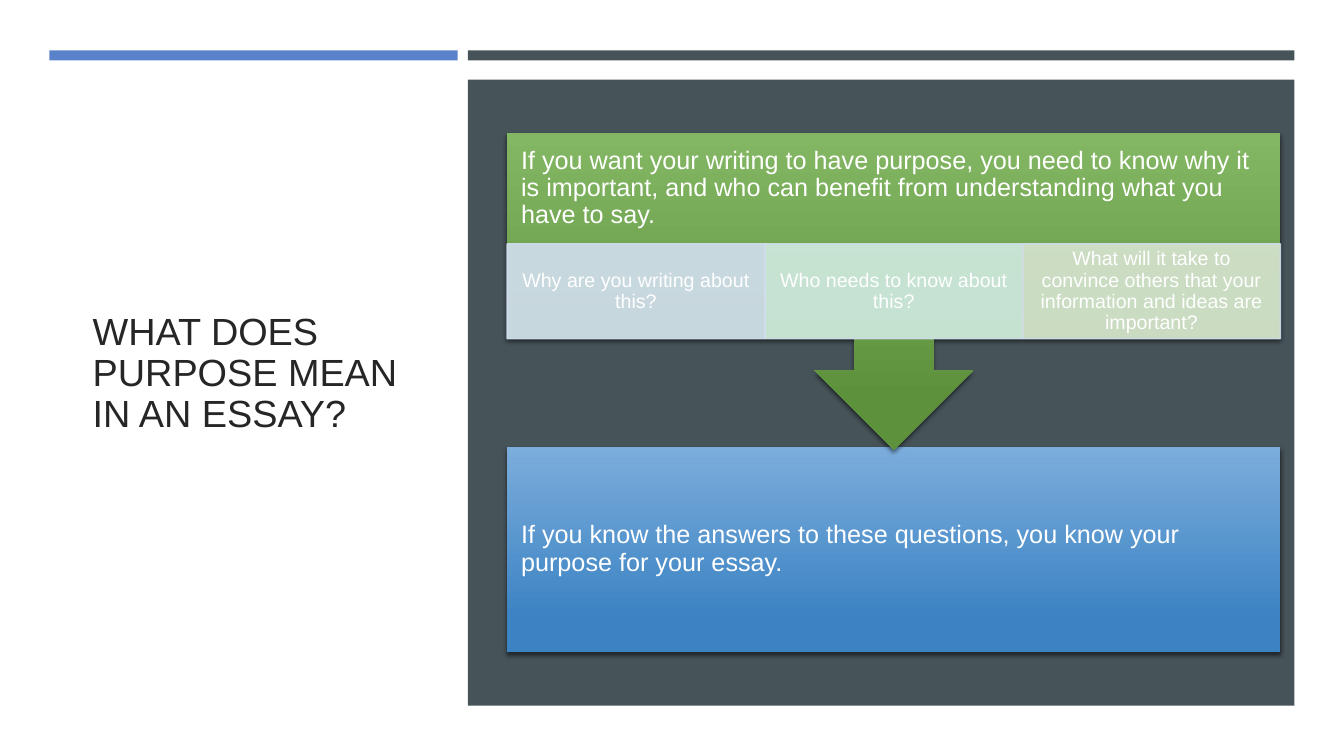
from lxml.etree import SubElement
from pptx import Presentation
from pptx.dml.color import RGBColor
from pptx.enum.shapes import MSO_SHAPE
from pptx.enum.text import MSO_ANCHOR, MSO_AUTO_SIZE, PP_ALIGN
from pptx.oxml.ns import qn
from pptx.util import Inches, Pt

WHITE = RGBColor(0xFF, 0xFF, 0xFF)
INK = RGBColor(0x26, 0x26, 0x26)
ACCENT = RGBColor(0x5A, 0x82, 0xCB)
SLATE = RGBColor(0x46, 0x53, 0x59)
BLUES = (RGBColor(0x7B, 0xAD, 0xDC), RGBColor(0x3C, 0x83, 0xC3))
GREENS = (RGBColor(0x83, 0xB7, 0x63), RGBColor(0x5E, 0x91, 0x3C))
PALE_BLUE = RGBColor(0xD2, 0xDE, 0xEF)
PALE_MINT = RGBColor(0xD0, 0xEA, 0xE1)
PALE_GREEN = RGBColor(0xD5, 0xE3, 0xCF)

QUESTIONS = (
    ("Why are you writing about this?", PALE_BLUE),
    ("Who needs to know about this?", PALE_MINT),
    ("What will it take to convince others that your information and ideas are important?", PALE_GREEN),
)


class SlideBuilder:
    font = "Arial"
    line_spacing = 0.9
    columns = 100
    rows = 100

    def __init__(self, deck):
        self.deck = deck
        self.slide = deck.slides.add_slide(deck.slide_layouts[5])
        self.slide.background.fill.solid()
        self.slide.background.fill.fore_color.rgb = WHITE

    def across(self, count):
        return round(self.deck.slide_width * count / self.columns)

    def down(self, count):
        return round(self.deck.slide_height * count / self.rows)

    def place(self, left, top, width, height):
        return self.across(left), self.down(top), self.across(width), self.down(height)

    def add_text(self, shape, text, size, color, align=PP_ALIGN.LEFT, insets=None):
        frame = shape.text_frame
        frame.word_wrap = True
        frame.auto_size = MSO_AUTO_SIZE.NONE
        frame.vertical_anchor = MSO_ANCHOR.MIDDLE
        if insets:
            frame.margin_left = frame.margin_right = insets[0]
            frame.margin_top, frame.margin_bottom = insets[1:]
        para = frame.paragraphs[0]
        para.alignment = align
        para.line_spacing = self.line_spacing
        span = para.add_run()
        span.text = text
        span.font.name = self.font
        span.font.size = Pt(size)
        span.font.color.rgb = color

    def title(self, area, text):
        title = self.slide.shapes.title
        title.left, title.top, title.width, title.height = self.place(*area)
        self.add_text(title, text, 27, INK)

    def block(self, area, color):
        box = self.slide.shapes.add_shape(MSO_SHAPE.RECTANGLE, *self.place(*area))
        box.shadow.inherit = False
        box.fill.solid()
        box.fill.fore_color.rgb = color
        box.line.fill.background()
        return box

    def statement(self, kind, area, colors, text, covered_rows=0):
        box = self.slide.shapes.add_shape(kind, *self.place(*area))
        box.line.fill.background()
        box.fill.gradient()
        box.fill.gradient_angle = 270
        for stop, color, position in zip(box.fill.gradient_stops, colors, (0, 0.84)):
            stop.color.rgb = color
            stop.position = position
        self.cast_shadow(box)
        margin = Pt(10)
        self.add_text(box, text, 18, WHITE, insets=(margin, margin, margin + self.down(covered_rows)))

    def question(self, area, color, text):
        box = self.block(area, color)
        box.line.color.rgb = PALE_BLUE
        box.line.width = Pt(1)
        for tint in box._element.spPr.iter(qn("a:srgbClr")):
            SubElement(tint, qn("a:alpha"), val="90000")
        self.add_text(box, text, 14, WHITE, PP_ALIGN.CENTER, (Pt(8), Pt(1.5), Pt(1.5)))

    def cast_shadow(self, shape):
        shape.shadow.inherit = False
        effects = shape._element.spPr.find(qn("a:effectLst"))
        shadow = SubElement(effects, qn("a:outerShdw"), blurRad=str(Pt(3)), dist=str(Pt(2)),
                            dir="5400000", algn="ctr", rotWithShape="0")
        tint = SubElement(shadow, qn("a:srgbClr"), val="000000")
        SubElement(tint, qn("a:alpha"), val="55000")


def main():
    deck = Presentation()
    deck.slide_width, deck.slide_height = Inches(13.33), Inches(7.5)
    page = SlideBuilder(deck)

    page.title((6.15, 15.2, 25.06, 68.67), "WHAT DOES PURPOSE MEAN IN AN ESSAY?")

    panel_left, panel_width = 34.81, 61.5
    bar_top, bar_height = 6.67, 1.33
    page.block((3.68, bar_top, 30.38, bar_height), ACCENT)
    page.block((panel_left, bar_top, panel_width, bar_height), SLATE)
    page.block((panel_left, 10.53, panel_width, 82.8), SLATE)

    left, width = 37.73, 57.54
    question_top, question_height = 32.27, 12.53
    page.statement(MSO_SHAPE.RECTANGLE, (left, 59.07, width, 27.2), BLUES,
                   "If you know the answers to these questions, you know your purpose for your essay.")
    page.statement(MSO_SHAPE.DOWN_ARROW_CALLOUT, (left, 17.6, width, 41.87), GREENS,
                   "If you want your writing to have purpose, you need to know why it is important, "
                   "and who can benefit from understanding what you have to say.", question_height)

    question_width = width / len(QUESTIONS)
    for index, (text, color) in enumerate(QUESTIONS):
        area = (left + index * question_width, question_top, question_width, question_height)
        page.question(area, color, text)

    deck.save("out.pptx")


if __name__ == "__main__":
    main()
